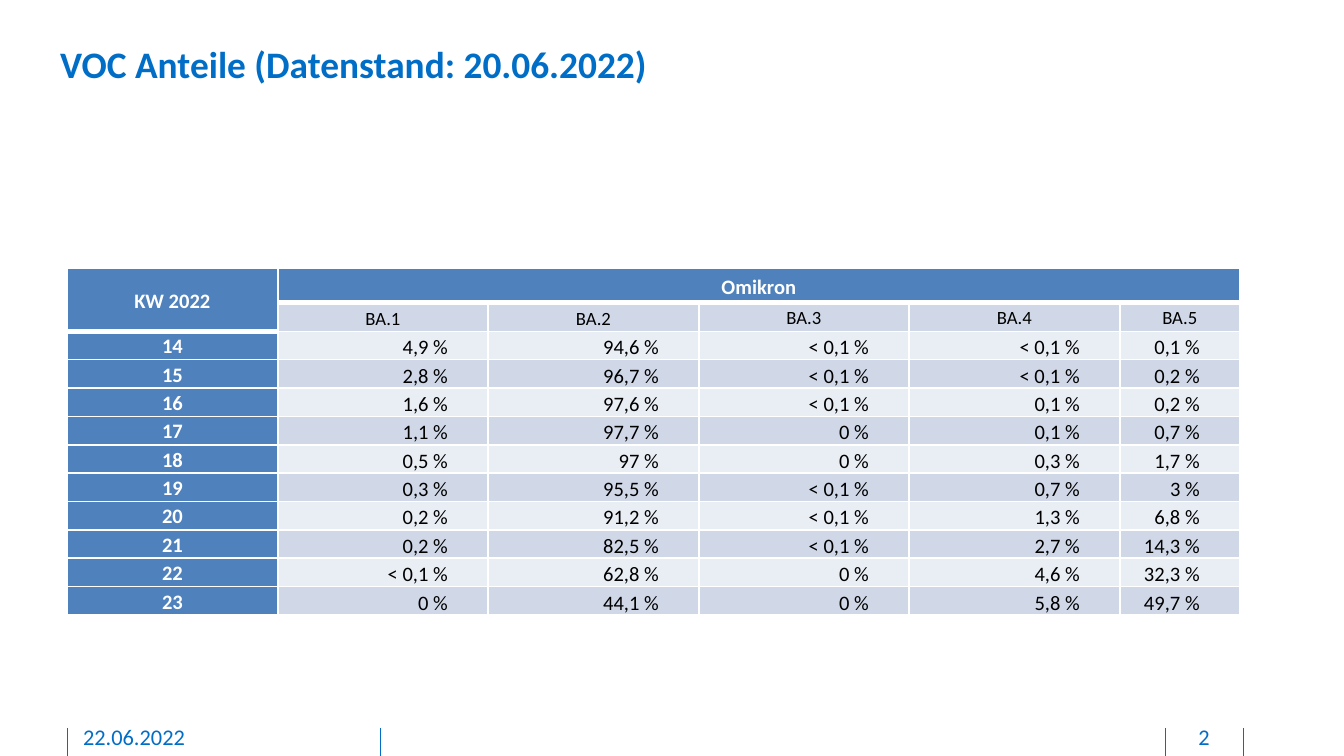
from dataclasses import dataclass
from itertools import pairwise

from lxml import etree
from pptx import Presentation
from pptx import util as u
from pptx.dml.color import RGBColor
from pptx.enum import shapes, text
from pptx.oxml.ns import qn

SCALE = 914400 / 134.4  # EMU per px


def px(n):
    return u.Emu(round(n * SCALE))


@dataclass(frozen=True)
class Theme:
    font: str = "Calibri"
    accent: str = "006EC7"
    header: str = "4F81BD"
    band_dark: str = "D0D8E8"
    band_light: str = "E9EDF4"
    white: str = "FFFFFF"
    black: str = "000000"
    title_size: int = 20
    footer_size: int = 12
    table_size: int = 11
    subhead_size: int = 10


ALIGN = {"l": text.PP_ALIGN.LEFT, "c": text.PP_ALIGN.CENTER, "r": text.PP_ALIGN.RIGHT}
ANCHOR = {"t": text.MSO_ANCHOR.TOP, "m": text.MSO_ANCHOR.MIDDLE, "b": text.MSO_ANCHOR.BOTTOM}


def write(tf, content, *, font, size, color, bold=False, align="l", spacing=None):
    p = tf.paragraphs[0]
    p.alignment = ALIGN[align]
    if spacing:
        p.line_spacing = spacing
    r = p.add_run()
    r.text = content
    r.font.name = font
    r.font.size = u.Pt(size)
    r.font.bold = bold
    r.font.color.rgb = RGBColor.from_string(color)


class SlideBuilder:
    def __init__(self, slide, theme):
        self.s = slide
        self.theme = theme

    def line(self, x, y1, y2):
        sp = self.s.shapes.add_connector(
            shapes.MSO_CONNECTOR.STRAIGHT, px(x), px(y1), px(x), px(y2))
        sp.line.color.rgb = RGBColor.from_string(self.theme.accent)
        sp.line.width = u.Pt(0.5)
        etree.SubElement(sp._element.spPr, qn("a:effectLst"))

    def title(self, content, x, y, w, h):
        tf = self.s.shapes.add_textbox(px(x), px(y), px(w), px(h)).text_frame
        tf.word_wrap = False
        tf.auto_size = text.MSO_AUTO_SIZE.SHAPE_TO_FIT_TEXT
        write(tf, content, font=self.theme.font, size=self.theme.title_size,
              color=self.theme.accent, bold=True)

    def footer(self, content, x, y, w, h, align="l"):
        tf = self.s.shapes.add_textbox(px(x), px(y), px(w), px(h)).text_frame
        tf.word_wrap = True
        tf.margin_left = tf.margin_top = tf.margin_right = 0
        tf.margin_bottom = px(7)
        write(tf, content, font=self.theme.font, size=self.theme.footer_size,
              color=self.theme.accent, align=align)

    def table(self, x, y, widths, heights):
        frame = self.s.shapes.add_table(
            len(heights), len(widths), px(x), px(y), px(sum(widths)), px(sum(heights)))
        table = frame.table
        table.first_row = table.horz_banding = False
        for column, w in zip(table.columns, widths):
            column.width = px(w)
        for row, h in zip(table.rows, heights):
            row.height = px(h)
        return table

    def borders(self, cell, bottom=1):
        tc_pr = cell._tc.get_or_add_tcPr()
        for side, width in (("L", 1), ("R", 1), ("T", 1), ("B", bottom)):
            ln = etree.SubElement(tc_pr, qn(f"a:ln{side}"), w=str(u.Pt(width)))
            fill = etree.SubElement(ln, qn("a:solidFill"))
            etree.SubElement(fill, qn("a:srgbClr"), val=self.theme.white)

    def cell(self, cell, content, fill, *, anchor="m", right=7, bottom=1, **fmt):
        self.borders(cell, bottom)
        cell.fill.solid()
        cell.fill.fore_color.rgb = RGBColor.from_string(fill)
        cell.vertical_anchor = ANCHOR[anchor]
        cell.margin_left, cell.margin_right = px(7), px(right)
        cell.margin_top = cell.margin_bottom = 0
        style = dict(font=self.theme.font, size=self.theme.table_size,
                     color=self.theme.black, align="c", spacing=1.15)
        write(cell.text_frame, content, **(style | fmt))


VARIANTS = ["BA.1", "BA.2", "BA.3", "BA.4", "BA.5"]
SHARES = {
    14: ["4,9", "94,6", "< 0,1", "< 0,1", "0,1"],
    15: ["2,8", "96,7", "< 0,1", "< 0,1", "0,2"],
    16: ["1,6", "97,6", "< 0,1", "0,1", "0,2"],
    17: ["1,1", "97,7", "0", "0,1", "0,7"],
    18: ["0,5", "97", "0", "0,3", "1,7"],
    19: ["0,3", "95,5", "< 0,1", "0,7", "3"],
    20: ["0,2", "91,2", "< 0,1", "1,3", "6,8"],
    21: ["0,2", "82,5", "< 0,1", "2,7", "14,3"],
    22: ["< 0,1", "62,8", "0", "4,6", "32,3"],
    23: ["0", "44,1", "0", "5,8", "49,7"],
}
COLUMN_EDGES = [67, 278, 488, 699, 909, 1120, 1240]


def add_share_table(b):
    t = b.theme
    widths = [right - left for left, right in pairwise(COLUMN_EDGES)]
    table = b.table(COLUMN_EDGES[0], 268, widths, [35, 24] + [27] * len(SHARES))
    head = dict(color=t.white, bold=True)

    table.cell(0, 0).merge(table.cell(1, 0))
    table.cell(0, 1).merge(table.cell(0, len(VARIANTS)))
    b.cell(table.cell(0, 0), "KW 2022", t.header, bottom=3, **head)
    b.cell(table.cell(0, 1), "Omikron", t.header, bottom=3, **head)
    for spanned in [table.cell(1, 0)] + [table.cell(0, c) for c in range(2, 6)]:
        b.borders(spanned, bottom=3)
    for c, variant in enumerate(VARIANTS, 1):
        b.cell(table.cell(1, c), variant, t.band_dark, size=t.subhead_size,
               anchor="m" if c < 3 else "t")

    for row, (week, shares) in enumerate(SHARES.items(), 2):
        b.cell(table.cell(row, 0), str(week), t.header, spacing=1.1, **head)
        band = t.band_dark if row % 2 else t.band_light
        for c, share in enumerate(shares, 1):
            centred = c == 3 or (c == 4 and share.startswith("<"))
            b.cell(table.cell(row, c), f"{share} %", band, align="r", right=40,
                   anchor="m" if centred else "b")


def main():
    prs = Presentation()
    prs.slide_width, prs.slide_height = px(1344), px(756)
    b = SlideBuilder(prs.slides.add_slide(prs.slide_layouts[6]), Theme())

    for x in (1165, 381, 67, 1243):
        b.line(x, 728, 756)
    b.title("VOC Anteile (Datenstand: 20.06.2022)", 47, 35, 618, 59)
    b.footer("22.06.2022", 83, 723, 273, 28)
    b.footer("2", 1168, 723, 72, 28, align="c")
    add_share_table(b)
    prs.save("out.pptx")


if __name__ == "__main__":
    main()
